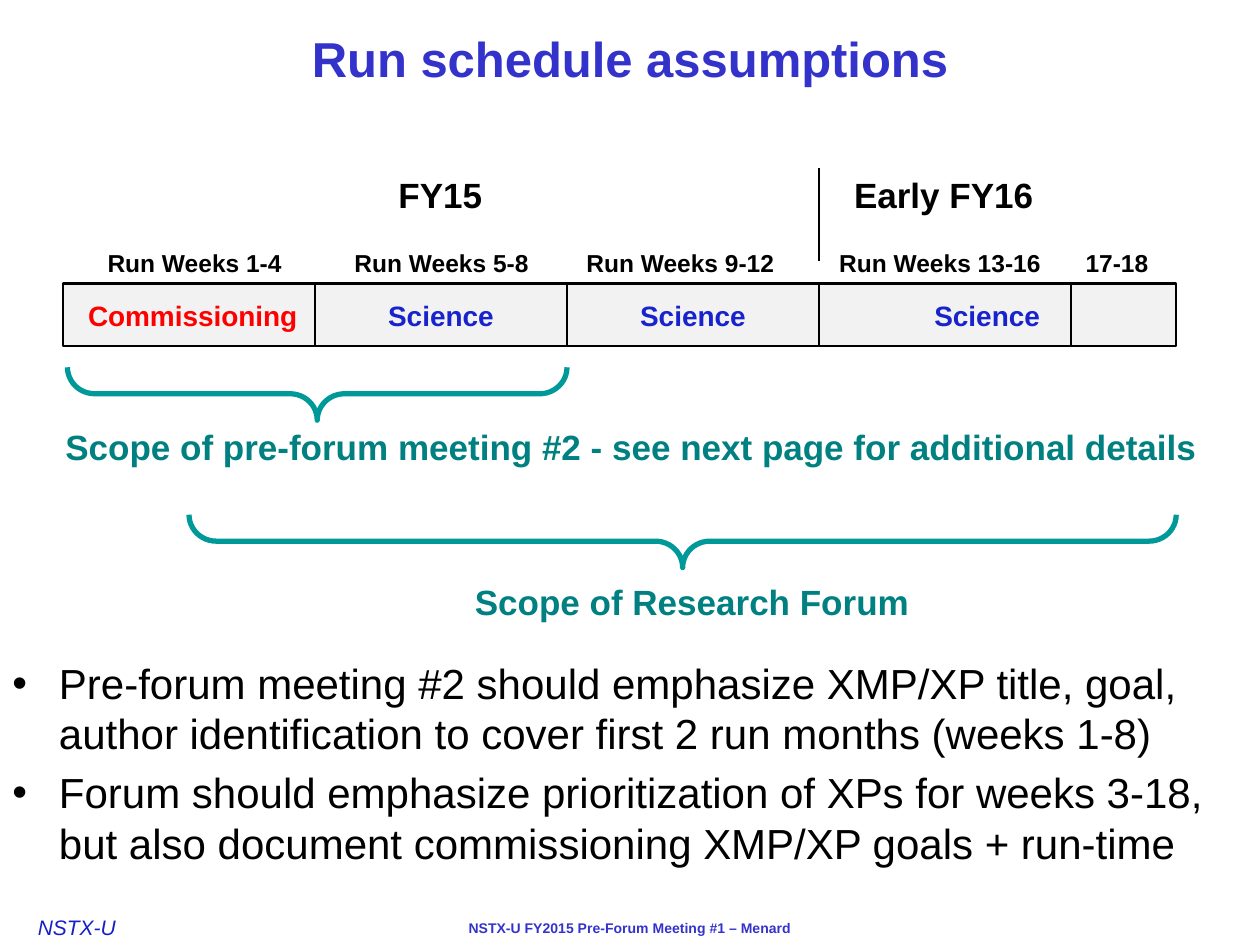
from dataclasses import dataclass
from typing import Any

from lxml.etree import SubElement
from pptx import Presentation
from pptx.dml.color import RGBColor
from pptx.enum.shapes import MSO_CONNECTOR, MSO_SHAPE
from pptx.enum.text import MSO_ANCHOR, PP_ALIGN
from pptx.oxml.ns import qn
from pptx.util import Inches, Pt

COLORS = {
    "title": "3333CC", "footer": "171FC7", "text": "000000", "bar": "F2F2F2",
    "commissioning": "FF0000", "science": "1822CD",
    "brace": "009999", "scope": "008080",
}
CELL = 0.5


def rgb(name):
    return RGBColor.from_string(COLORS[name])


def grid(*cells):
    return [Inches(cell * CELL) for cell in cells]


@dataclass
class ScheduleSlide:
    slide: Any
    font: str = "Arial"

    def add_words(self, paragraph, text, size, color, bold=True, italic=False):
        run = paragraph.add_run()
        run.text = text
        run.font.name = self.font
        run.font.size = Pt(size)
        run.font.bold = bold
        run.font.italic = italic
        run.font.color.rgb = rgb(color)

    def box(self, col, row, cols, rows, wrap=True):
        frame = self.slide.shapes.add_textbox(*grid(col, row, cols, rows)).text_frame
        frame.word_wrap = wrap
        return frame

    def label(self, text, col, row, cols, rows, size, color,
              align=PP_ALIGN.CENTER, wrap=False, anchor=MSO_ANCHOR.TOP):
        frame = self.box(col, row, cols, rows, wrap)
        frame.vertical_anchor = anchor
        paragraph = frame.paragraphs[0]
        paragraph.alignment = align
        self.add_words(paragraph, text, size, color)

    def tag(self, text, col, row, cols, rows):
        frame = self.box(col, row, cols, rows)
        frame.margin_left = frame.margin_right = 0
        frame.margin_top = frame.margin_bottom = 0
        self.add_words(frame.paragraphs[0], text, 12, "footer", bold=False, italic=True)

    def phase(self, text, col, row, cols, color, indent):
        bar = self.slide.shapes.add_shape(MSO_SHAPE.RECTANGLE, *grid(col, row, cols, 1))
        bar.shadow.inherit = False
        bar.fill.solid()
        bar.fill.fore_color.rgb = rgb("bar")
        bar.line.color.rgb = rgb("text")
        bar.line.width = Pt(1.25)
        if text:
            frame = bar.text_frame
            frame.margin_left = Inches(indent * CELL)
            frame.margin_right = frame.margin_top = frame.margin_bottom = 0
            frame.vertical_anchor = MSO_ANCHOR.MIDDLE
            frame.paragraphs[0].alignment = PP_ALIGN.CENTER
            self.add_words(frame.paragraphs[0], text, 16, color)

    def divider(self, col, top, bottom):
        line = self.slide.shapes.add_connector(
            MSO_CONNECTOR.STRAIGHT, *grid(col, bottom, col, top))
        line.line.color.rgb = rgb("text")
        line.line.width = Pt(1.5)
        SubElement(line._element.spPr, qn("a:effectLst"))

    def brace(self, start, end, top, depth=0.84):
        span = end - start
        left = (start + end - depth) / 2
        brace = self.slide.shapes.add_shape(
            MSO_SHAPE.RIGHT_BRACE, *grid(left, top + (depth - span) / 2, depth, span))
        brace.rotation = 90
        brace.adjustments[0] = 0.515
        brace.adjustments[1] = 0.5
        brace.shadow.inherit = False
        brace.fill.background()
        brace.line.color.rgb = rgb("brace")
        brace.line.width = Pt(3)

    def bullets(self, points, col, row, cols, rows):
        frame = self.box(col, row, cols, rows)
        for index, point in enumerate(points):
            paragraph = frame.add_paragraph() if index else frame.paragraphs[0]
            properties = paragraph._p.get_or_add_pPr()
            properties.set("marL", str(Inches(0.37)))
            properties.set("indent", str(Inches(-0.37)))
            SubElement(properties, qn("a:buFont"), typeface=self.font)
            SubElement(properties, qn("a:buChar"), char="•")
            if index:
                paragraph.space_before = Pt(4.8)
            self.add_words(paragraph, point, 24, "text", bold=False)


def main():
    deck = Presentation()
    deck.slide_width, deck.slide_height = grid(20, 15)
    page = ScheduleSlide(deck.slides.add_slide(deck.slide_layouts[6]))

    page.tag("NSTX-U", 0.6, 14.52, 1.74, 0.4)
    page.label("NSTX-U FY2015 Pre-Forum Meeting #1 – Menard",
               4, 14.5, 12, 0.48, 8, "title", wrap=True)
    page.label("Run schedule assumptions", 0, 0, 20, 1.84, 28, "title",
               wrap=True, anchor=MSO_ANCHOR.MIDDLE)
    page.bullets([
        "Pre-forum meeting #2 should emphasize XMP/XP title, goal, "
        "author identification to cover first 2 run months (weeks 1-8)",
        "Forum should emphasize prioritization of XPs for weeks 3-18, "
        "but also document commissioning XMP/XP goals + run-time",
    ], 0, 10.34, 20, 3.66)

    phases = [
        ("Run Weeks 1-4", 3.09, 3.18, "Commissioning", "commissioning", 4, 0.12),
        ("Run Weeks 5-8", 7.01, 3.18, "Science", "science", 4, 0),
        ("Run Weeks 9-12", 10.8, 3.4, "Science", "science", 4, 0),
        ("Run Weeks 13-16", 14.92, 3.62, "Science", "science", 4, 1.34),
        ("17-18", 17.73, 1.4, "", "science", 1.67, 0),
    ]
    col = 1
    for weeks, center, width, activity, color, cols, indent in phases:
        page.phase(activity, col, 4.5, cols, color, indent)
        page.label(weeks, center - width / 2, 3.84, width, 0.68, 14, "text")
        col += cols

    page.divider(13, 2.66, 4.14)
    page.label("FY15", 6.12, 2.66, 1.74, 0.88, 20, "text")
    page.label("Early FY16", 13.34, 2.66, 3.28, 0.88, 20, "text")

    page.brace(1.07, 9, 5.83)
    page.label("Scope of pre-forum meeting #2 - see next page for additional details",
               0.84, 6.66, 18.5, 0.88, 20, "scope", PP_ALIGN.LEFT)
    page.brace(3, col, 8.17)
    page.label("Scope of Research Forum", 7.34, 9.12, 7.36, 0.88, 20, "scope",
               PP_ALIGN.LEFT)

    deck.save("out.pptx")


if __name__ == "__main__":
    main()
